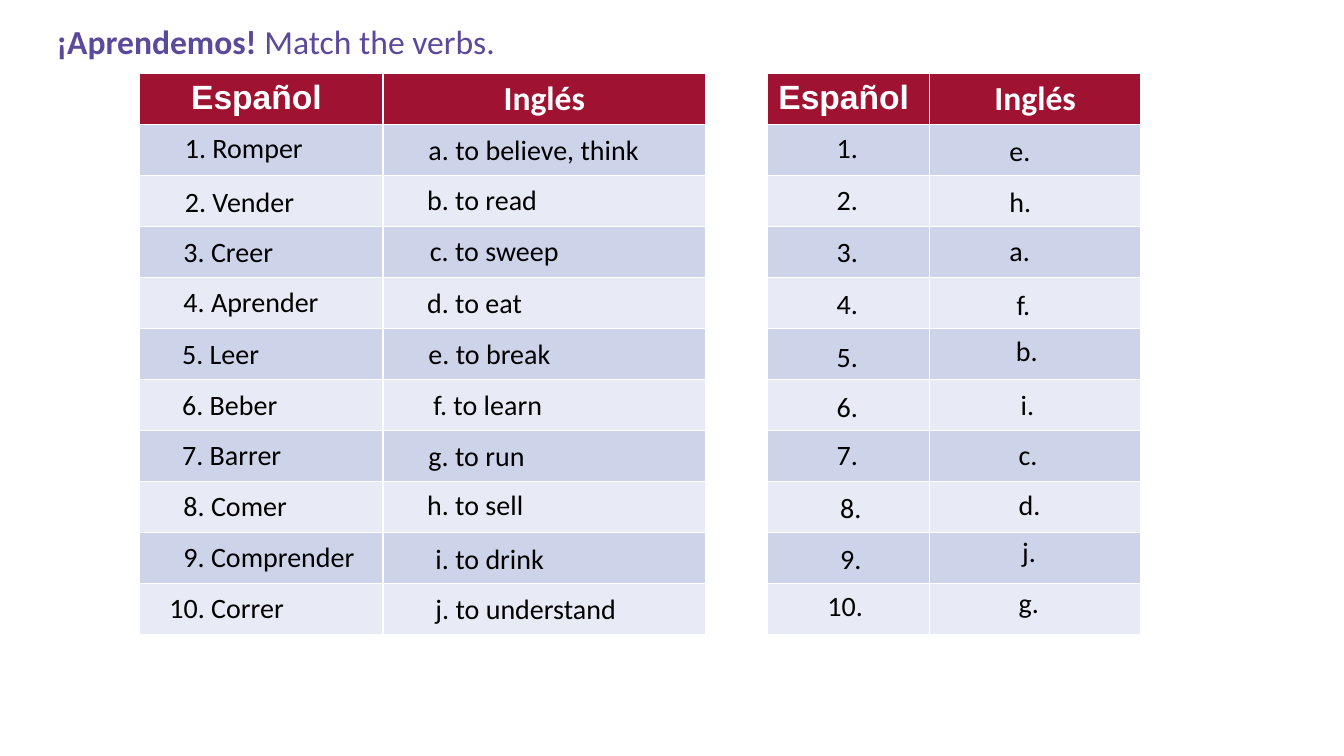
"""Build a verb-matching slide with two tables and movable answer labels."""
from pptx import Presentation
from pptx.dml.color import RGBColor
from pptx.enum.text import MSO_ANCHOR, MSO_AUTO_SIZE, PP_ALIGN
from pptx.util import Pt

TITLE = [("¡Aprendemos! ", True), ("Match the verbs.", False)]
HEADERS = [("Español ", "Arial"), ("Inglés", "Calibri")]
TABLES = [(99.4, (174.2, 230.4)), (548, (116, 150.8))]
TABLE_TOP, ROWS, ROW_H = 52.6, 11, 36.4
HEADER_FILL, BANDS = "9F1231", ("CDD4EA", "E8EBF5")

LABEL_H = 31.5
LABELS = [
    (191, [("1. Romper", 125, 90), ("2. Vender", 125, 128),
           ("3. Creer", 124, 164), ("4. Aprender", 124, 200),
           ("5. Leer", 123, 237), ("6. Beber", 123, 273),
           ("7. Barrer", 123, 309), ("8. Comer", 124, 345.5),
           ("9. Comprender", 124, 382), ("10. Correr", 114, 418.5)]),
    (180, [("a. to believe, think", 299, 91), ("b. to read", 298, 127),
           ("c. to sweep", 300, 163.5), ("d. to eat", 298, 200.5),
           ("e. to break", 299, 237), ("f. to learn", 302.5, 273),
           ("g. to run", 299, 309.5), ("h. to sell", 298, 345),
           ("i. to drink", 304, 383), ("j. to understand", 304, 419)]),
    (191, [("1.", 590.5, 90), ("2.", 590.5, 127), ("3.", 590.5, 164),
           ("4.", 590.5, 201), ("5.", 590.5, 239), ("6.", 590.5, 274.5),
           ("7.", 590.5, 309), ("8.", 593, 346.5), ("9.", 593, 383.5),
           ("10.", 584, 417)]),
    (152.6, [("e.", 714, 91.5), ("h.", 714, 128), ("a.", 714, 163.5),
             ("f.", 719, 201.5), ("b.", 718.5, 235), ("i.", 722, 273.5),
             ("c.", 720.5, 309), ("d.", 720.5, 345), ("j.", 723, 378),
             ("g.", 720.5, 414.5)]),
]


def rgb(value):
    return RGBColor.from_string(value)


def style(p, size, color, name="Calibri"):
    p.font.size, p.font.name = Pt(size), name
    p.font.color.rgb = rgb(color)


def add_title(s):
    sp = s.shapes.title
    sp.left, sp.top, sp.width, sp.height = Pt(33), Pt(11), Pt(828), Pt(49)
    tf = sp.text_frame
    tf.auto_size, tf.vertical_anchor = MSO_AUTO_SIZE.NONE, MSO_ANCHOR.TOP
    p = tf.paragraphs[0]
    p.alignment = PP_ALIGN.LEFT
    for text, bold in TITLE:
        r = p.add_run()
        r.text, r.font.bold = text, bold
        style(r, 24, "5B499A")


def add_grid(s, left, widths):
    table = s.shapes.add_table(ROWS, len(widths), Pt(left), Pt(TABLE_TOP),
                               Pt(sum(widths)), Pt(ROWS * ROW_H)).table
    for column, width in zip(table.columns, widths):
        column.width = Pt(width)
    for i, row in enumerate(table.rows):
        row.height = Pt(ROW_H)
        for cell in row.cells:
            cell.fill.solid()
            cell.fill.fore_color.rgb = rgb(BANDS[(i - 1) % 2] if i else HEADER_FILL)
    for cell, (text, name) in zip(table.rows[0].cells, HEADERS):
        p = cell.text_frame.paragraphs[0]
        p.text, p.alignment, p.font.bold = text, PP_ALIGN.CENTER, True
        style(p, 24, "FFFFFF", name)


def add_label(s, text, left, top, width):
    sp = s.shapes.add_textbox(Pt(left), Pt(top), Pt(width), Pt(LABEL_H))
    tf = sp.text_frame
    tf.word_wrap, tf.auto_size = True, MSO_AUTO_SIZE.SHAPE_TO_FIT_TEXT
    p = tf.paragraphs[0]
    p.text = text
    style(p, 20, "000000")


def main():
    prs = Presentation()
    prs.slide_width, prs.slide_height = Pt(960), Pt(540)
    s = prs.slides.add_slide(prs.slide_layouts[5])
    add_title(s)
    for left, widths in TABLES:
        add_grid(s, left, widths)
    for width, labels in LABELS:
        for text, left, top in labels:
            add_label(s, text, left, top, width)
    prs.save("out.pptx")


if __name__ == "__main__":
    main()
